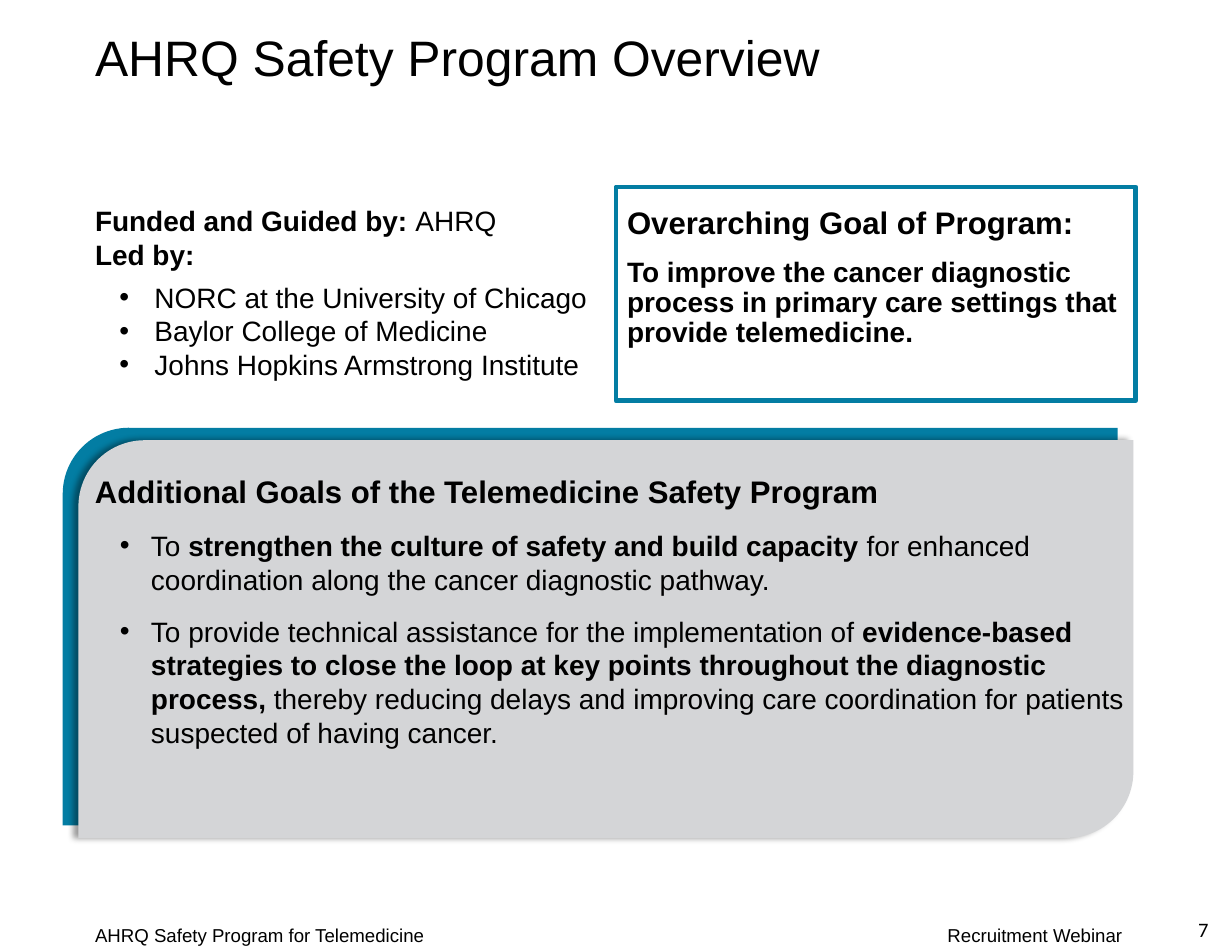
from lxml import etree
from pptx import Presentation
from pptx import util as u
from pptx.dml import color
from pptx.enum import shapes, text
from pptx.oxml import ns

COLORS = {"ink": "000000", "teal": "037DA3", "panel": "D4D5D7", "paper": "FFFFFF"}


def rgb(name):
    return color.RGBColor.from_string(COLORS[name])


def add_xml(parent, tag, **attributes):
    return etree.SubElement(parent, ns.qn(tag), attributes)


class SlideBuilder:
    """Holds the text style and the current slide."""

    def __init__(self, page, font="Arial", size=18):
        self.page, self.font, self.size = page, font, size
        fill = page.background.fill
        fill.solid()
        fill.fore_color.rgb = rgb("paper")

    def text_box(self, left, top, width, height, middle=False):
        box = self.page.shapes.add_textbox(*map(u.Pt, (left, top, width, height)))
        frame = box.text_frame
        frame.word_wrap = True
        if middle:
            frame.vertical_anchor = text.MSO_ANCHOR.MIDDLE
        return frame

    def paragraph(self, frame, *runs, size=None, font=None, indent=None,
                  before=0, after=0, spacing=None, align=None):
        """Each run is a (words, bold) pair; indent is (text margin, bullet hang)."""
        first = frame.paragraphs[0]
        para = frame.add_paragraph() if first.runs else first
        if indent:
            margin, hang = indent
            props = para._p.get_or_add_pPr()
            props.set("marL", str(u.Pt(margin)))
            props.set("indent", str(-u.Pt(hang)))
            add_xml(props, "a:buFont", typeface="Arial")
            add_xml(props, "a:buChar", char="•")
        para.space_before, para.space_after = u.Pt(before), u.Pt(after)
        if spacing:
            para.line_spacing = spacing
        if align:
            para.alignment = align
        for words, bold in runs:
            span = para.add_run()
            span.text = words
            span.font.name = font or self.font
            span.font.size = u.Pt(size or self.size)
            span.font.bold = bold
            span.font.color.rgb = rgb("ink")

    def shape(self, kind, left, top, width, height, fill=None, line=None, parent=None):
        owner = parent or self.page
        shape = owner.shapes.add_shape(kind, *map(u.Pt, (left, top, width, height)))
        shape.shadow.inherit = False
        if fill:
            shape.fill.solid()
            shape.fill.fore_color.rgb = rgb(fill)
        else:
            shape.fill.background()
        if line:
            shape.line.color.rgb = rgb(line)
            shape.line.width = u.Pt(3)
        else:
            shape.line.fill.background()
        return shape

    def cast_shadow(self, shape, blur, distance, angle, opacity):
        effects = shape._element.spPr.find(ns.qn("a:effectLst"))
        shadow = add_xml(effects, "a:outerShdw", blurRad=str(u.Pt(blur)),
                         dist=str(u.Pt(distance)), dir=str(angle * 60000),
                         algn="ctr", rotWithShape="0")
        tint = add_xml(shadow, "a:srgbClr", val=COLORS["ink"])
        add_xml(tint, "a:alpha", val=str(opacity * 1000))


def main():
    deck = Presentation()
    deck.slide_width, deck.slide_height = u.Pt(792), u.Pt(612)
    slide = SlideBuilder(deck.slides.add_slide(deck.slide_layouts[6]))

    # Footer
    for words, left, width in (("Recruitment Webinar", 602, 137),
                               ("AHRQ Safety Program for Telemedicine", 54, 300)):
        footer = slide.text_box(left, 590.4, width, 21.6)
        slide.paragraph(footer, (words, False), size=12)
    number = slide.text_box(738, 584.6, 46, 26, middle=True)
    slide.paragraph(number, ("7", False), size=13.2, font="Calibri",
                    align=text.PP_ALIGN.RIGHT)

    # Layered panel behind the additional goals
    group = slide.page.shapes.add_group_shape()
    kind = shapes.MSO_SHAPE.ROUND_2_DIAG_RECTANGLE
    slide.shape(kind, 40.3, 275, 678.2, 255.6, fill="teal", parent=group)
    panel = slide.shape(kind, 50.4, 283, 678.2, 255.6, fill="panel", parent=group)
    slide.cast_shadow(panel, blur=4, distance=3, angle=180, opacity=40)

    # Title
    title = slide.text_box(54, 0, 683.3, 77.8, middle=True)
    slide.paragraph(title, ("AHRQ Safety Program Overview", False), size=32, spacing=0.9)

    # Funder and leading institutions
    leaders = slide.text_box(54, 127.4, 342, 130.3)
    slide.paragraph(leaders, ("Funded and Guided by: ", True), ("AHRQ", False))
    slide.paragraph(leaders, ("Led by:", True), after=6)
    for name in ("NORC at the University of Chicago", "Baylor College of Medicine",
                 "Johns Hopkins Armstrong Institute"):
        slide.paragraph(leaders, (name, False), indent=(38.2, 22.5))

    # Overarching goal and its frame
    goal = slide.text_box(396, 127.4, 342, 130.3)
    slide.paragraph(goal, ("Overarching Goal of Program:", True), size=20)
    slide.paragraph(goal, ("To improve the cancer diagnostic process in primary care "
                           "settings that provide telemedicine.", True),
                    before=11, spacing=0.9)
    slide.shape(shapes.MSO_SHAPE.RECTANGLE, 396, 120.2, 334.1, 137.5, line="teal")

    # Additional goals
    goals = slide.text_box(54, 300.2, 684, 238.3)
    slide.paragraph(goals, ("Additional Goals of the Telemedicine Safety Program", True),
                    size=20, after=12)
    slide.paragraph(goals, ("To ", False),
                    ("strengthen the culture of safety and build capacity ", True),
                    ("for enhanced coordination along the cancer diagnostic pathway.", False),
                    indent=(36, 20), after=12)
    slide.paragraph(goals,
                    ("To provide technical assistance for the implementation of ", False),
                    ("evidence-based strategies to close the loop at key points "
                     "throughout the diagnostic process,", True),
                    (" thereby reducing delays and improving care coordination for "
                     "patients suspected of having cancer.", False),
                    indent=(36, 20))

    deck.save("out.pptx")


if __name__ == "__main__":
    main()
